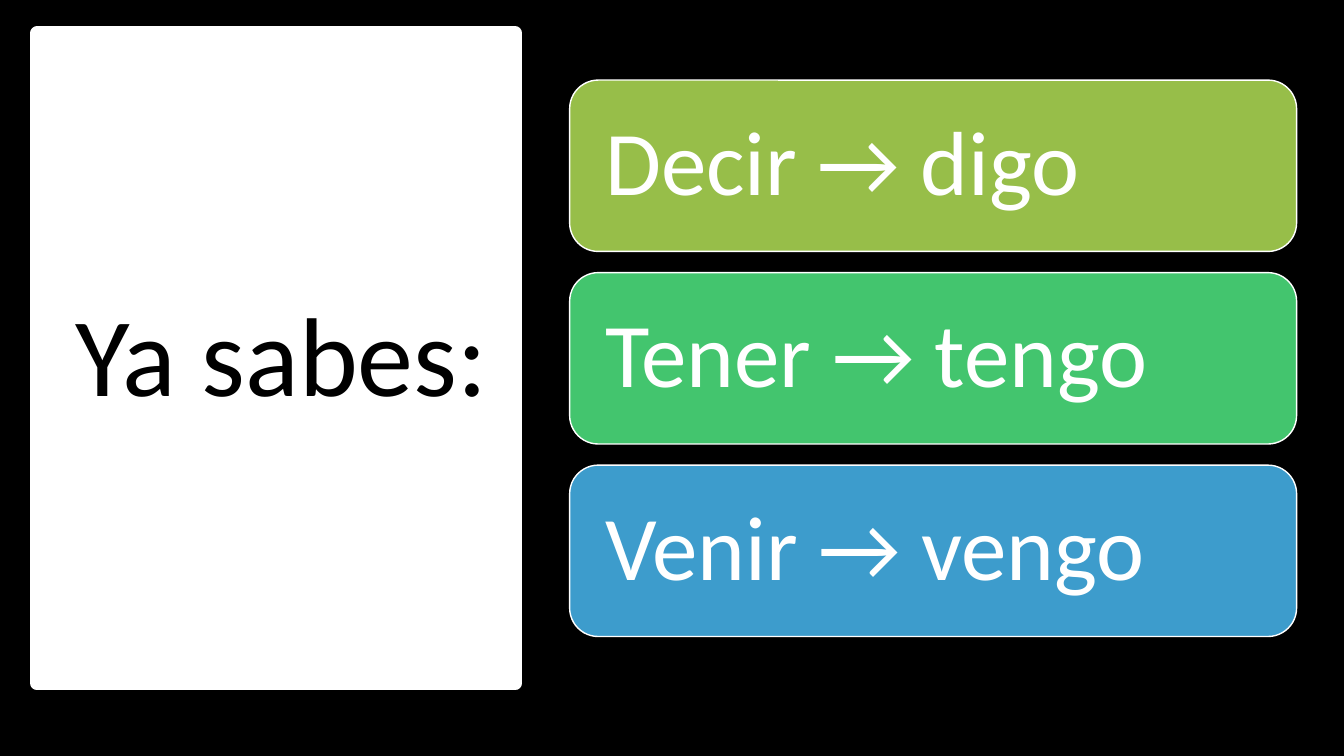
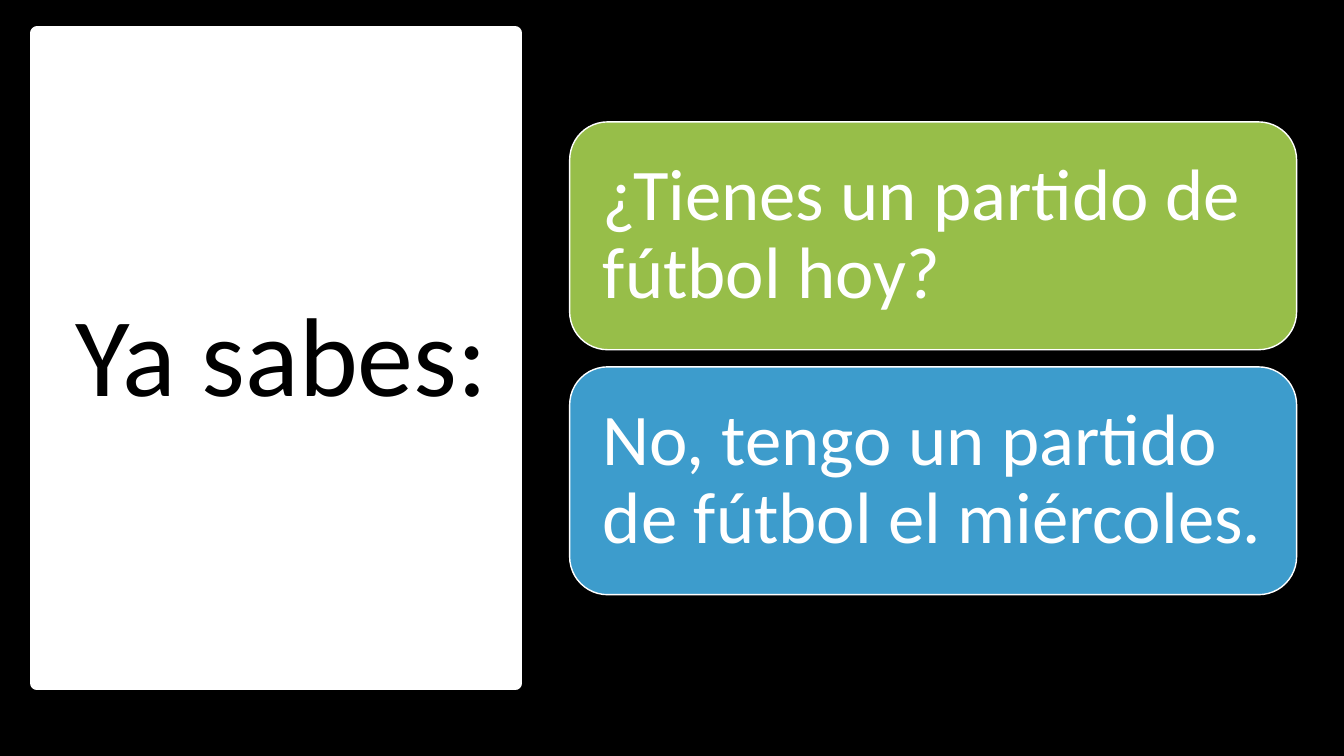
from pptx import Presentation
from pptx.dml.color import RGBColor
from pptx.enum.shapes import MSO_SHAPE
from pptx.enum.text import MSO_ANCHOR, PP_ALIGN
from pptx.util import Inches, Pt

RECTANGLE = MSO_SHAPE.RECTANGLE
ROUNDED = MSO_SHAPE.ROUNDED_RECTANGLE
MIDDLE = MSO_ANCHOR.MIDDLE
LEFT = PP_ALIGN.LEFT

FONT = "Calibri"
COLORS = {
    "black": "000000",
    "white": "FFFFFF",
    "lime": "97BE49",
    "green": "43C56E",
    "blue": "3D9CCC",
}

# Regions as left, top, width, height in inches
TITLE_PANEL = (0.37, 0.33, 4.74, 6.45)
CARD_COLUMN = (5.65, 0.33, 7.21, 6.45)


def color(name):
    return RGBColor.from_string(COLORS[name])


def add_box(slide, preset, box, fill, line_width):
    shape = slide.shapes.add_shape(preset, *map(Inches, box))
    shape.shadow.inherit = False
    shape.fill.solid()
    shape.fill.fore_color.rgb = color(fill)
    shape.line.color.rgb = color("white")
    shape.line.width = Pt(line_width)
    return shape


def write(shape, text, size, text_color, inset_x, inset_y):
    frame = shape.text_frame
    frame.text = text
    frame.word_wrap = True
    frame.vertical_anchor = MIDDLE
    frame.margin_left = frame.margin_right = Inches(inset_x)
    frame.margin_top = frame.margin_bottom = Inches(inset_y)
    paragraph = frame.paragraphs[0]
    paragraph.alignment = LEFT
    paragraph.line_spacing = 0.9
    font = paragraph.runs[0].font
    font.name = FONT
    font.size = Pt(size)
    font.color.rgb = color(text_color)


def add_title_panel(slide, box, text):
    left, top, width, height = box
    add_box(slide, RECTANGLE, box, "white", 10)
    indent = 0.28
    title_box = (left + indent, top + 0.37, width - indent, height - 0.7)
    title = slide.shapes.add_textbox(*map(Inches, title_box))
    write(title, text, 80, "black", 0.1, 0.05)


def add_cards(slide, box, cards, card_height, gap, size, inset):
    """Stack equal cards, centred vertically in the box."""
    left, top, width, height = box
    step = card_height + gap
    first_top = top + (height - step * len(cards) + gap) / 2
    for index, (text, fill) in enumerate(cards):
        card_box = (left, first_top + index * step, width, card_height)
        card = add_box(slide, ROUNDED, card_box, fill, 1)
        write(card, text, size, "white", inset, inset)


def add_review_slide(prs, cards, **card_style):
    slide = prs.slides.add_slide(prs.slide_layouts[6])
    background = slide.background.fill
    background.solid()
    background.fore_color.rgb = color("black")
    add_title_panel(slide, TITLE_PANEL, "Ya sabes:")
    add_cards(slide, CARD_COLUMN, cards, **card_style)


def main():
    prs = Presentation()
    prs.slide_width = Inches(13.33)
    prs.slide_height = Inches(7.5)

    # Irregular verb forms
    add_review_slide(
        prs,
        [
            ("Decir → digo", "lime"),
            ("Tener → tengo", "green"),
            ("Venir → vengo", "blue"),
        ],
        card_height=1.7, gap=0.21, size=65, inset=0.27,
    )

    # Question and answer
    add_review_slide(
        prs,
        [
            ("¿Tienes un partido de fútbol hoy?", "lime"),
            ("No, tengo un partido de fútbol el miércoles.", "blue"),
        ],
        card_height=2.26, gap=0.17, size=52, inset=0.22,
    )

    prs.save("out.pptx")


if __name__ == "__main__":
    main()
